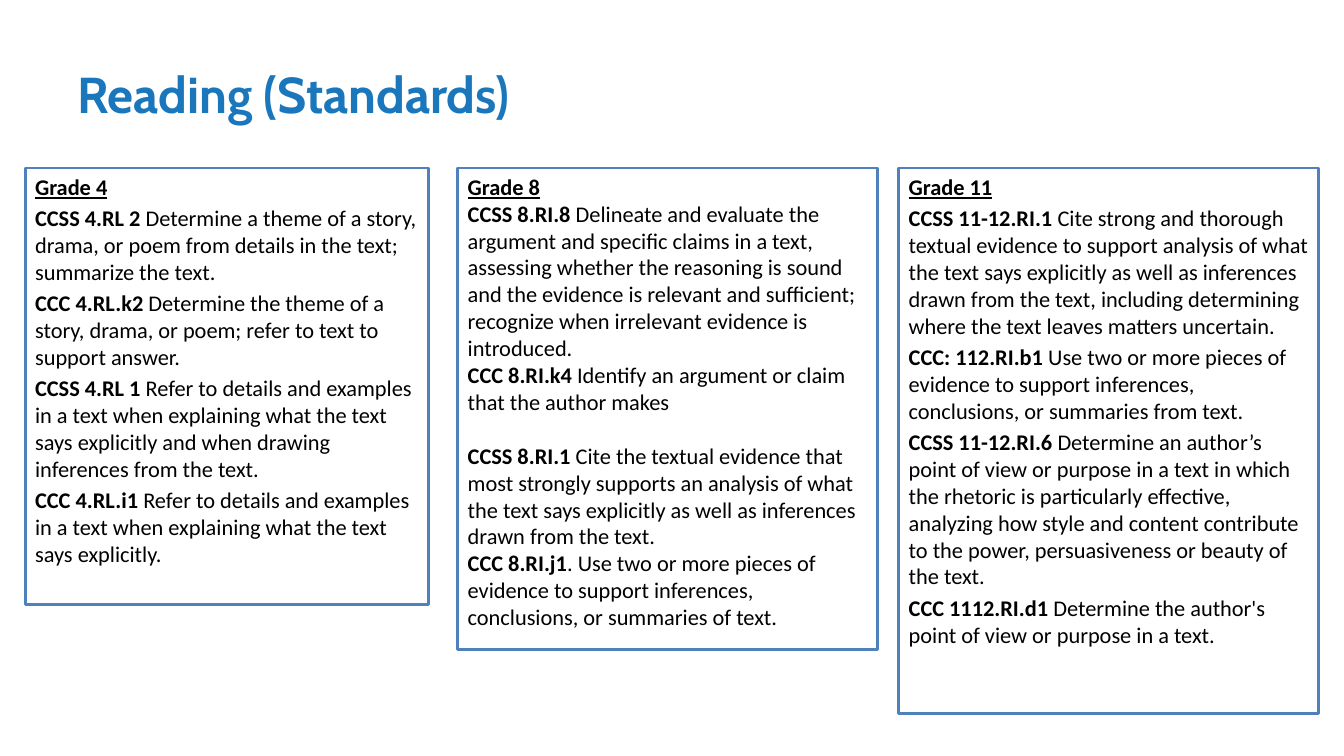
from pptx import Presentation
from pptx.dml.color import RGBColor
from pptx.enum.shapes import MSO_SHAPE
from pptx.enum.text import MSO_ANCHOR, PP_ALIGN
from pptx.util import Pt

TITLE_BLUE = RGBColor(0x1B, 0x77, 0xBC)
BORDER_BLUE = RGBColor(0x4F, 0x81, 0xBD)
BLACK = RGBColor(0, 0, 0)
WHITE = RGBColor(255, 255, 255)

COLUMN_TOP = 120
SMALL_GAP = 3.2
LINE_GAP = 19.5

GRADE_4 = [
    ("CCSS 4.RL 2", " Determine a theme of a story, drama, or poem from details in the text; "
     "summarize the text.", SMALL_GAP),
    ("CCC 4.RL.k2", " Determine the theme of a story, drama, or poem; refer to text to "
     "support answer.", SMALL_GAP),
    ("CCSS 4.RL 1", " Refer to details and examples in a text when explaining what the text "
     "says explicitly and when drawing inferences from the text.", SMALL_GAP),
    ("CCC 4.RL.i1", " Refer to details and examples in a text when explaining what the text "
     "says explicitly.", SMALL_GAP),
]
GRADE_8 = [
    ("CCSS 8.RI.8", " Delineate and evaluate the argument and specific claims in a text, "
     "assessing whether the reasoning is sound and the evidence is relevant and sufficient; "
     "recognize when irrelevant evidence is introduced.", 0),
    ("CCC 8.RI.k4", " Identify an argument or claim that the author makes", 0),
    ("CCSS 8.RI.1", " Cite the textual evidence that most strongly supports an analysis of what "
     "the text says explicitly as well as inferences drawn from the text.", LINE_GAP),
    ("CCC 8.RI.j1", ". Use two or more pieces of evidence to support inferences, conclusions, "
     "or summaries of text.", 0),
]
GRADE_11 = [
    ("CCSS 11-12.RI.1", " Cite strong and thorough textual evidence to support analysis of what "
     "the text says explicitly as well as inferences drawn from the text, including determining "
     "where the text leaves matters uncertain.", SMALL_GAP),
    ("CCC: 112.RI.b1", " Use two or more pieces of evidence to support inferences, conclusions, "
     "or summaries from text.", SMALL_GAP),
    ("CCSS 11-12.RI.6", " Determine an author’s point of view or purpose in a text in which the "
     "rhetoric is particularly effective, analyzing how style and content contribute to the "
     "power, persuasiveness or beauty of the text.", SMALL_GAP),
    ("CCC 1112.RI.d1", " Determine the author's point of view or purpose in a text.", SMALL_GAP),
]
COLUMNS = [
    ("Grade 4", GRADE_4, 18, 288, 312),
    ("Grade 8", GRADE_8, 327, 300, 344),
    ("Grade 11", GRADE_11, 642, 300, 390),
]


class StandardsSlide:
    title_font = "Cabin"
    body_font = "Calibri"
    title_size = 36
    body_size = 16

    def __init__(self, deck):
        self.page = deck.slides.add_slide(deck.slide_layouts[6])

    def title(self, text, left, top, width, height):
        box = self.page.shapes.add_textbox(Pt(left), Pt(top), Pt(width), Pt(height))
        frame = box.text_frame
        frame.word_wrap = True
        frame.vertical_anchor = MSO_ANCHOR.MIDDLE
        frame.text = text
        font = frame.paragraphs[0].runs[0].font
        font.name = self.title_font
        font.size = Pt(self.title_size)
        font.bold = True
        font.color.rgb = TITLE_BLUE

    def span(self, para, text, bold=False, underline=False):
        span = para.add_run()
        span.text = text
        span.font.name = self.body_font
        span.font.size = Pt(self.body_size)
        span.font.bold = bold
        span.font.underline = underline
        span.font.color.rgb = BLACK

    def column(self, heading, standards, left, width, height):
        box = self.page.shapes.add_shape(
            MSO_SHAPE.RECTANGLE, Pt(left), Pt(COLUMN_TOP), Pt(width), Pt(height))
        box.shadow.inherit = False
        box.fill.solid()
        box.fill.fore_color.rgb = WHITE
        box.line.color.rgb = BORDER_BLUE
        box.line.width = Pt(2)
        frame = box.text_frame
        frame.word_wrap = True
        frame.vertical_anchor = MSO_ANCHOR.TOP
        para = frame.paragraphs[0]
        para.alignment = PP_ALIGN.LEFT
        self.span(para, heading, bold=True, underline=True)
        for code, description, gap in standards:
            para = frame.add_paragraph()
            para.alignment = PP_ALIGN.LEFT
            para.space_before = Pt(gap)
            self.span(para, code, bold=True)
            self.span(para, description)


def main():
    deck = Presentation()
    deck.slide_width = Pt(960)
    deck.slide_height = Pt(540)
    slide = StandardsSlide(deck)
    slide.title("Reading (Standards)", 48, 21.6, 864, 90)
    for column in COLUMNS:
        slide.column(*column)
    deck.save("out.pptx")


if __name__ == "__main__":
    main()
